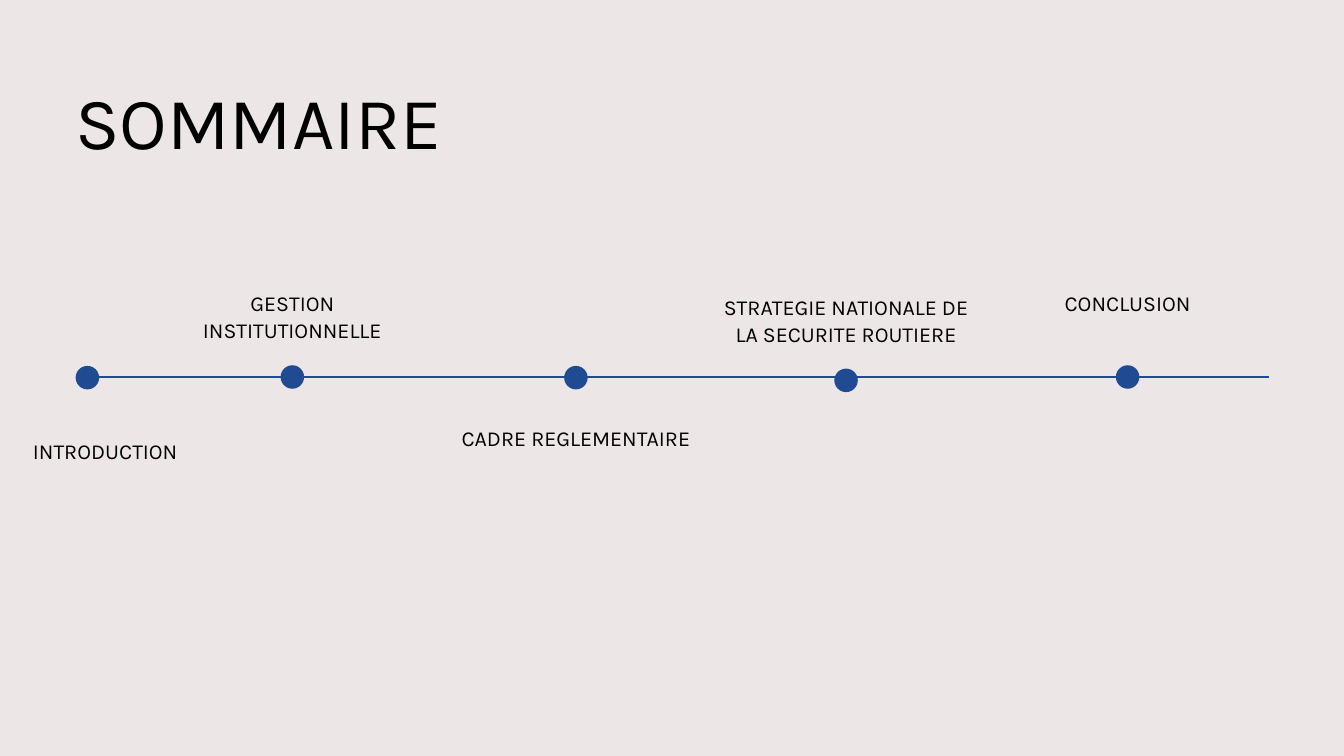
from pptx import Presentation, util as u
from pptx.dml.color import RGBColor
from pptx.enum import shapes, text
from pptx.oxml.ns import qn
from lxml import etree

COLORS = {"back": "ECE7E6", "blue": "204B93", "ink": "000000"}
LEFT, MID = text.PP_ALIGN.LEFT, text.PP_ALIGN.CENTER
WIDE, DOT = 3.68, 0.35

# Label, its left, top and height, its alignment, and the dot's centre
STEPS = [
    ("INTRODUCTION", 0.49, 6.49, 0.4, LEFT, 1.3, 5.62),
    ("GESTION INSTITUTIONNELLE", 2.51, 4.28, 0.82, MID, 4.35, 5.61),
    ("CADRE REGLEMENTAIRE", 6.73, 6.29, 0.4, MID, 8.57, 5.62),
    ("STRATEGIE NATIONALE DE LA SECURITE ROUTIERE",
     10.75, 4.34, 0.82, MID, 12.59, 5.66),
    ("CONCLUSION", 14.94, 4.28, 0.4, MID, 16.78, 5.61),
]


class Deck:
    """Holds the style and the current slide."""
    font = "Karla"

    def __init__(self, wide, high):
        self.prs = Presentation()
        self.prs.slide_width = u.Inches(wide)
        self.prs.slide_height = u.Inches(high)
        self.slide = self.prs.slides.add_slide(self.prs.slide_layouts[6])
        self.paint(self.slide.background.fill, "back")

    def paint(self, fill, name):
        fill.solid()
        fill.fore_color.rgb = RGBColor.from_string(COLORS[name])

    def line(self, x1, y1, x2, y2):
        ends = [u.Inches(v) for v in (x1, y1, x2, y2)]
        line = self.slide.shapes.add_connector(
            shapes.MSO_CONNECTOR.STRAIGHT, *ends)
        self.paint(line.line.fill, "blue")
        line.line.width = u.Pt(1.5)
        etree.SubElement(line._element.spPr, qn("a:effectLst"))

    def dot(self, x, y):
        box = [u.Inches(v) for v in (x - DOT / 2, y - DOT / 2, DOT, DOT)]
        dot = self.slide.shapes.add_shape(shapes.MSO_SHAPE.OVAL, *box)
        dot.shadow.inherit = False
        self.paint(dot.fill, "blue")
        dot.line.fill.background()

    def label(self, words, x, y, w, h, size, lead, align=LEFT):
        box = [u.Inches(v) for v in (x, y, w, h)]
        frame = self.slide.shapes.add_textbox(*box).text_frame
        frame.margin_left = frame.margin_right = 0
        frame.margin_top = frame.margin_bottom = 0
        frame.word_wrap = True
        frame.auto_size = text.MSO_AUTO_SIZE.SHAPE_TO_FIT_TEXT
        frame.text = words
        para = frame.paragraphs[0]
        para.alignment = align
        para.line_spacing = u.Pt(lead)
        font = para.runs[0].font
        font.name, font.size = self.font, u.Pt(size)
        self.paint(font.fill, "ink")


def main():
    deck = Deck(20, 11.25)

    # Title
    deck.label("SOMMAIRE", 1.12, 1.12, 17.75, 1.31, 79, 94.8)

    # Timeline
    deck.line(1.3, 5.61, 18.88, 5.61)
    for words, x, y, high, align, mid, level in STEPS:
        deck.dot(mid, level)
        deck.label(words, x, y, WIDE, high, 22.9, 29.8, align)

    deck.prs.save("out.pptx")


if __name__ == "__main__":
    main()
